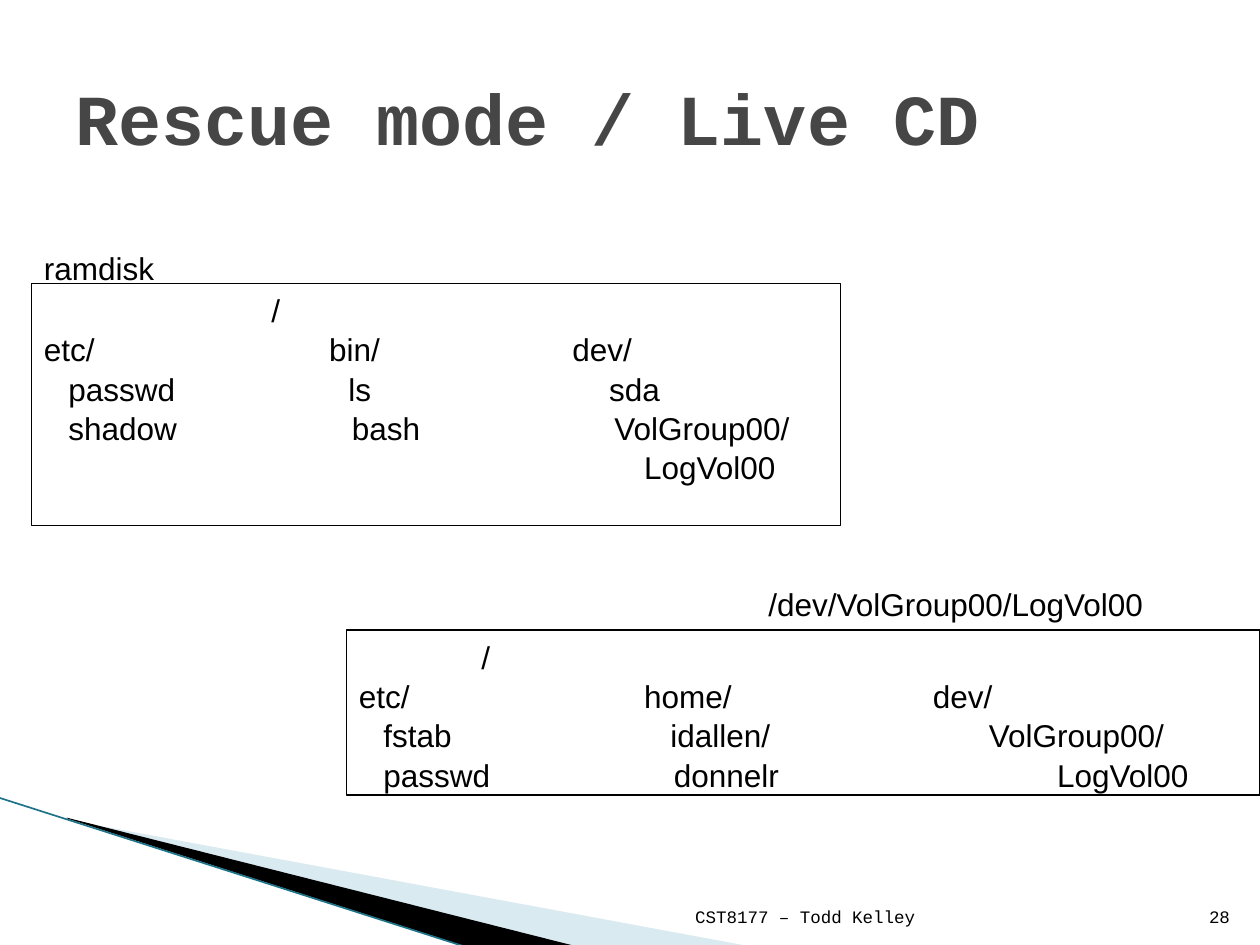
from lxml.etree import SubElement
from pptx import Presentation
from pptx.dml.color import RGBColor
from pptx.enum.shapes import MSO_CONNECTOR as CONN, MSO_SHAPE as SHAPE
from pptx.enum.text import MSO_ANCHOR as ANCHOR, PP_ALIGN as ALIGN
from pptx.oxml.ns import qn
from pptx.util import Pt

BLACK = "000000"
BODY = {"name": "Arial", "size": Pt(18)}
TITLE = {"name": "Courier New", "size": Pt(41), "bold": True}
FOOTER = {"name": "Courier New", "size": Pt(10)}

WEDGES = [
    ("A0CBDC", 40, [(39.6, 468.7), (428.4, 540.7), (328.3, 540.7), (39.6, 468)]),
    (BLACK, 100, [(38.2, 467.3), (329, 540.7), (267.8, 541.4), (38.9, 468)]),
]
EDGE = ("1F7388", 0.95, (-0.7, 455.8, 267.1, 541.4))

LABELS = [
    ("Rescue mode / Live CD", (36, 21.6, 648, 90), TITLE, "464646", ANCHOR.MIDDLE, ALIGN.LEFT),
    ("CST8177 – Todd Kelley", (344.9, 504.7, 185, 28.8), FOOTER, BLACK, ANCHOR.BOTTOM, ALIGN.RIGHT),
    ("28", (681.1, 504.7, 28.8, 28.8), FOOTER, BLACK, ANCHOR.BOTTOM, ALIGN.RIGHT),
    ("ramdisk", (18, 138.2, 120.2, 28.8), BODY, BLACK, ANCHOR.TOP, ALIGN.LEFT),
    ("/dev/VolGroup00/LogVol00", (432, 329.8, 234, 28.8), BODY, BLACK, ANCHOR.TOP, ALIGN.LEFT),
]

TREES = [
    ((18, 162, 462.2, 138.2), [
        [(130, "/")],
        [(0, "etc/"), (163, "bin/"), (302, "dev/")],
        [(14, "passwd"), (174, "ls"), (323, "sda")],
        [(14, "shadow"), (176, "bash"), (326, "VolGroup00/")],
        [(343, "LogVol00")],
    ]),
    ((198, 360, 522, 94.3), [
        [(70, "/")],
        [(0, "etc/"), (163, "home/"), (328, "dev/")],
        [(14, "fstab"), (178, "idallen/"), (360, "VolGroup00/")],
        [(14, "passwd"), (180, "donnelr"), (399, "LogVol00")],
    ]),
]


def rgb(color):
    return RGBColor.from_string(color)


def box(at):
    return [Pt(v) for v in at]


def write(p, text, font, color, align=ALIGN.LEFT):
    p.alignment = align
    if font is BODY:
        p.line_spacing = 1.04
    r = p.add_run()
    r.text = text
    for name, value in font.items():
        setattr(r.font, name, value)
    r.font.color.rgb = rgb(color)


def add_wedge(s, color, opacity, points):
    builder = s.shapes.build_freeform(*box(points[0]))
    builder.add_line_segments([box(point) for point in points[1:]], close=True)
    sp = builder.convert_to_shape()
    sp.shadow.inherit = False
    sp.fill.solid()
    sp.fill.fore_color.rgb = rgb(color)
    sp.line.fill.background()
    if opacity < 100:
        clr = sp.fill._xPr.find(qn("a:solidFill"))[0]
        SubElement(clr, qn("a:alpha"), val=str(opacity * 1000))


def add_edge(s, color, width, ends):
    line = s.shapes.add_connector(CONN.STRAIGHT, *box(ends))
    line.line.color.rgb = rgb(color)
    line.line.width = Pt(width)
    SubElement(line._element.spPr, qn("a:effectLst"))


def add_label(s, text, at, font, color, anchor, align):
    tf = s.shapes.add_textbox(*box(at)).text_frame
    tf.word_wrap = True
    tf.vertical_anchor = anchor
    write(tf.paragraphs[0], text, font, color, align)


def add_tree(s, at, rows):
    sp = s.shapes.add_shape(SHAPE.RECTANGLE, *box(at))
    sp.shadow.inherit = False
    sp.fill.background()
    sp.line.color.rgb = rgb(BLACK)
    sp.line.width = Pt(0.75)
    tf = sp.text_frame
    tf.word_wrap = True
    tf.vertical_anchor = ANCHOR.TOP
    for i, row in enumerate(rows):
        p = tf.add_paragraph() if i else tf.paragraphs[0]
        write(p, "".join("\t" * (x > 0) + name for x, name in row), BODY, BLACK)
        tabs = SubElement(p._p.get_or_add_pPr(), qn("a:tabLst"))
        for x, _ in row:
            if x:
                SubElement(tabs, qn("a:tab"), pos=str(Pt(x)), algn="l")


def main():
    prs = Presentation()
    prs.slide_width, prs.slide_height = Pt(720), Pt(540)
    s = prs.slides.add_slide(prs.slide_layouts[6])
    for wedge in WEDGES:
        add_wedge(s, *wedge)
    add_edge(s, *EDGE)
    for label in LABELS:
        add_label(s, *label)
    for tree in TREES:
        add_tree(s, *tree)
    prs.save("out.pptx")


if __name__ == "__main__":
    main()
